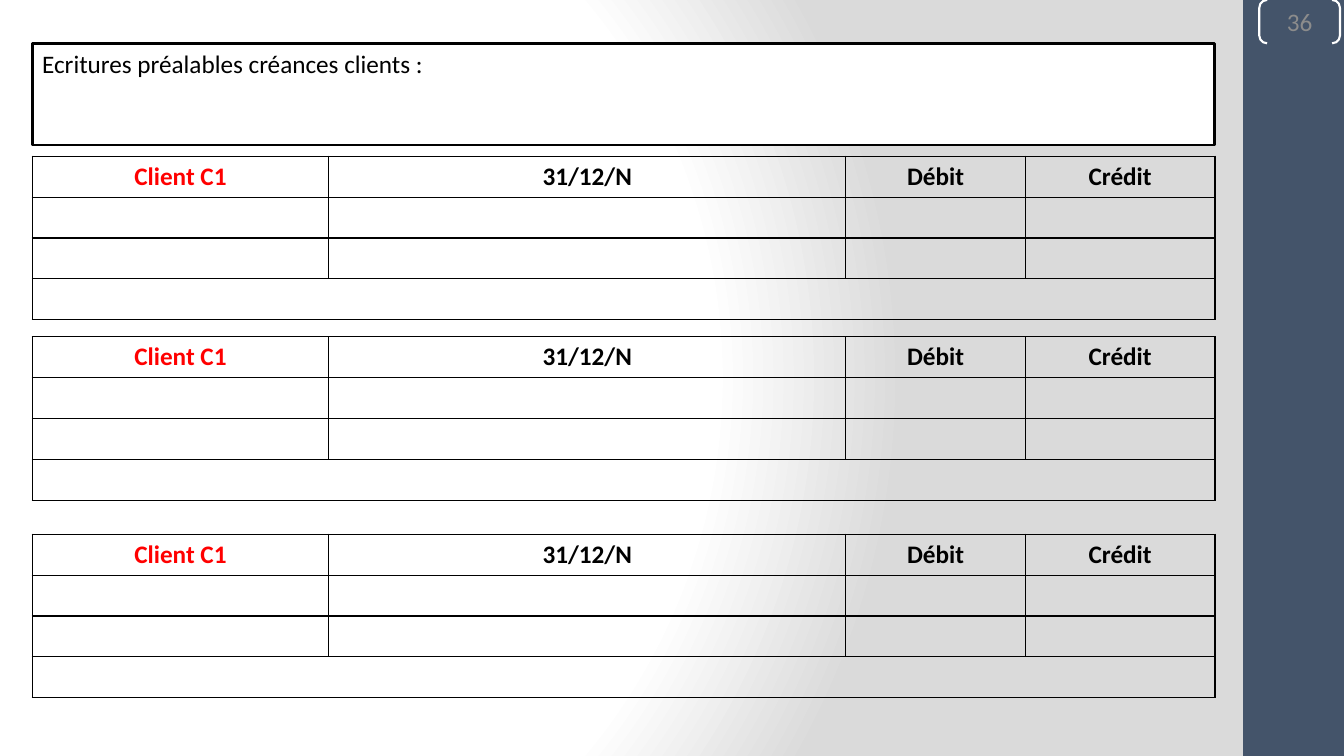
import lxml.etree
import pptx
import pptx.dml.color
import pptx.enum.shapes
import pptx.enum.text
import pptx.oxml
import pptx.oxml.ns
import pptx.util

INCHES = pptx.util.Inches
SHAPE = pptx.enum.shapes.MSO_SHAPE
ALIGN = pptx.enum.text.PP_ALIGN
ANCHOR = pptx.enum.text.MSO_ANCHOR
WIDTH, HEIGHT = 13.33, 7.5
LEFT, CONTENT_WIDTH = 0.32, 11.73
COLUMNS = [0.96, 1.98, 0.88, 4.25, 1.78, 1.88]
ROWS, ROW_HEIGHT = 4, 0.4
JOURNAL_TOPS = [1.55, 3.34, 5.3]
HEADINGS = [(0, "Client C1", "FF0000"), (2, "31/12/N", "000000"),
            (4, "Débit", "000000"), (5, "Crédit", "000000")]


def rgb(value):
    return pptx.dml.color.RGBColor.from_string(value)


def write(tf, text, color, align, bold=False):
    p = tf.paragraphs[0]
    p.alignment = align
    r = p.add_run()
    r.text = text
    r.font.name = "Calibri"
    r.font.size = pptx.util.Pt(18)
    r.font.bold = bold
    r.font.color.rgb = rgb(color)


def add_box(slide, kind, box, fill=None, line=None, weight=1):
    sp = slide.shapes.add_shape(kind, *map(INCHES, box))
    sp.shadow.inherit = False
    if fill:
        sp.fill.solid()
        sp.fill.fore_color.rgb = rgb(fill)
    else:
        sp.fill.background()
    if line:
        sp.line.color.rgb = rgb(line)
        sp.line.width = pptx.util.Pt(weight)
    else:
        sp.line.fill.background()
    return sp


def set_background(slide):
    stops = "".join(
        f'<a:gs pos="{share * 1000}"><a:srgbClr val="{color}"/></a:gs>'
        for share, color in [(0, "FFFFFF"), (75, "FFFFFF"), (100, "DADADA")])
    bg = pptx.oxml.parse_xml(
        f'<p:bg {pptx.oxml.ns.nsdecls("p", "a")}><p:bgPr>'
        f'<a:gradFill rotWithShape="1"><a:gsLst>{stops}</a:gsLst>'
        '<a:path path="circle"><a:fillToRect l="20000" t="50000" r="100000" b="50000"/></a:path>'
        '</a:gradFill><a:effectLst/></p:bgPr></p:bg>')
    slide.element.cSld.insert(0, bg)


def add_sidebar(slide, left, top, width, height, number):
    add_box(slide, SHAPE.RECTANGLE, (left, top, width, height), "44546A")
    sp = add_box(slide, SHAPE.DOUBLE_BRACKET, (left + 0.16 * width, top, 0.8 * width, 0.43),
                 line="FFFFFF", weight=1.5)
    sp.adjustments[0] = 0.18
    tf = sp.text_frame
    tf.margin_left = tf.margin_right = tf.margin_top = tf.margin_bottom = 0
    tf.vertical_anchor = ANCHOR.MIDDLE
    write(tf, number, "8C8C8C", ALIGN.CENTER)


def add_title(slide, left, top, width, height, text):
    sp = add_box(slide, SHAPE.RECTANGLE, (left, top, width, height), "FFFFFF", "000000", 2)
    tf = sp.text_frame
    tf.word_wrap = True
    tf.vertical_anchor = ANCHOR.TOP
    write(tf, text, "000000", ALIGN.LEFT)


def format_cell(cell):
    tcPr = cell._tc.get_or_add_tcPr()
    for side in "LRTB":
        tcPr.append(pptx.oxml.parse_xml(
            f'<a:ln{side} {pptx.oxml.ns.nsdecls("a")} w="12700"><a:solidFill>'
            f'<a:srgbClr val="000000"/></a:solidFill></a:ln{side}>'))
    cell.fill.background()


def add_journal(slide, left, top, width):
    frame = slide.shapes.add_table(ROWS, len(COLUMNS), INCHES(left), INCHES(top),
                                   INCHES(width), INCHES(ROWS * ROW_HEIGHT))
    table = frame.table
    table.first_row = table.horz_banding = False
    for column, share in zip(table.columns, COLUMNS):
        column.width = INCHES(width * share / sum(COLUMNS))
    for row in table.rows:
        row.height = INCHES(ROW_HEIGHT)
    for cell in table.iter_cells():
        format_cell(cell)
    for row in range(ROWS - 1):
        for col in (0, 2):
            table.cell(row, col).merge(table.cell(row, col + 1))
    table.cell(ROWS - 1, 0).merge(table.cell(ROWS - 1, len(COLUMNS) - 1))
    for col, text, color in HEADINGS:
        write(table.cell(0, col).text_frame, text, color, ALIGN.CENTER, True)


def main():
    prs = pptx.Presentation()
    prs.slide_width, prs.slide_height = INCHES(WIDTH), INCHES(HEIGHT)
    slide = prs.slides.add_slide(prs.slide_layouts[6])
    set_background(slide)
    add_sidebar(slide, WIDTH - 1, 0, 1, HEIGHT, "36")
    add_title(slide, LEFT, 0.43, CONTENT_WIDTH, 1.01, "Ecritures préalables créances clients :")
    for top in JOURNAL_TOPS:
        add_journal(slide, LEFT, top, CONTENT_WIDTH)
    prs.save("out.pptx")


if __name__ == "__main__":
    main()
